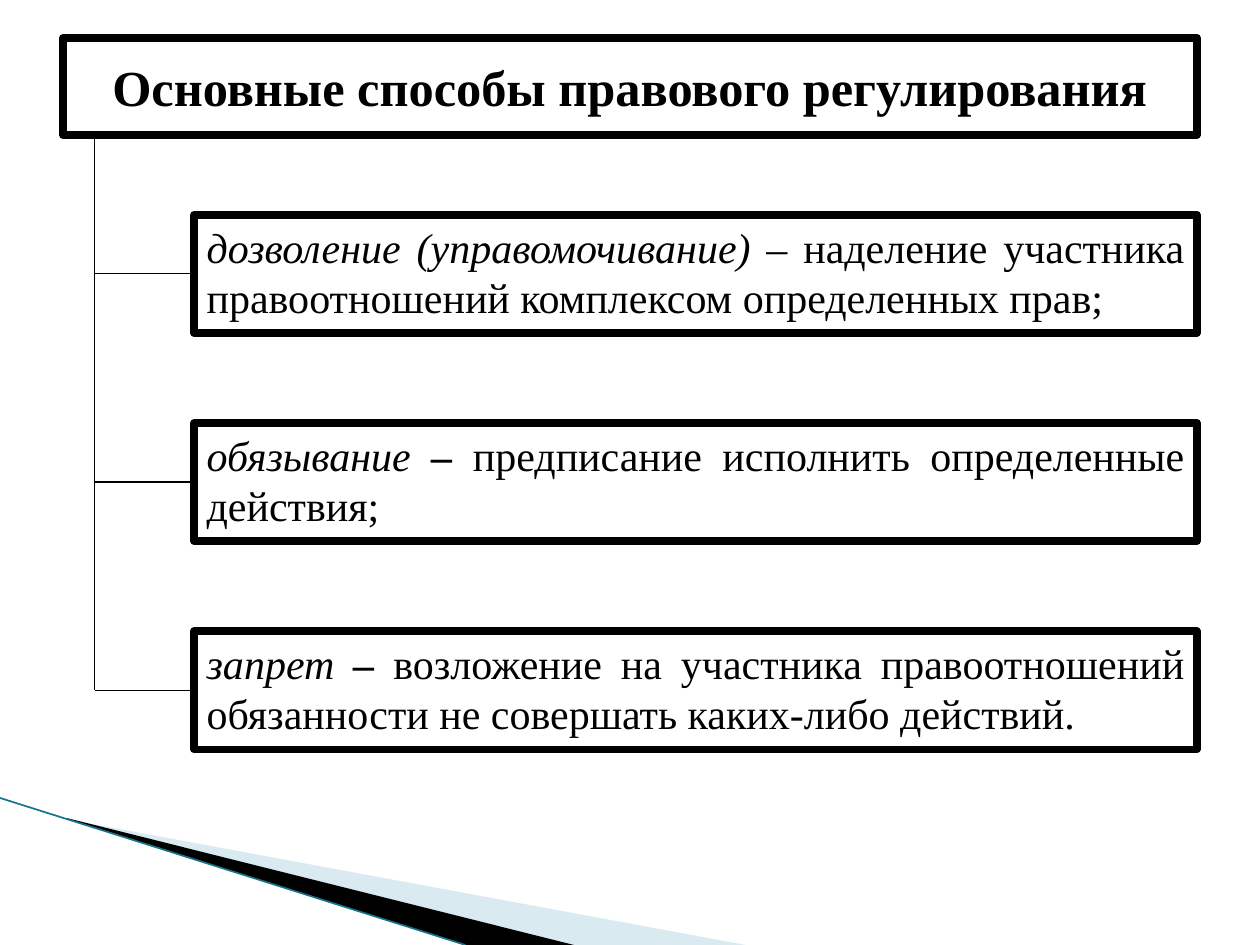
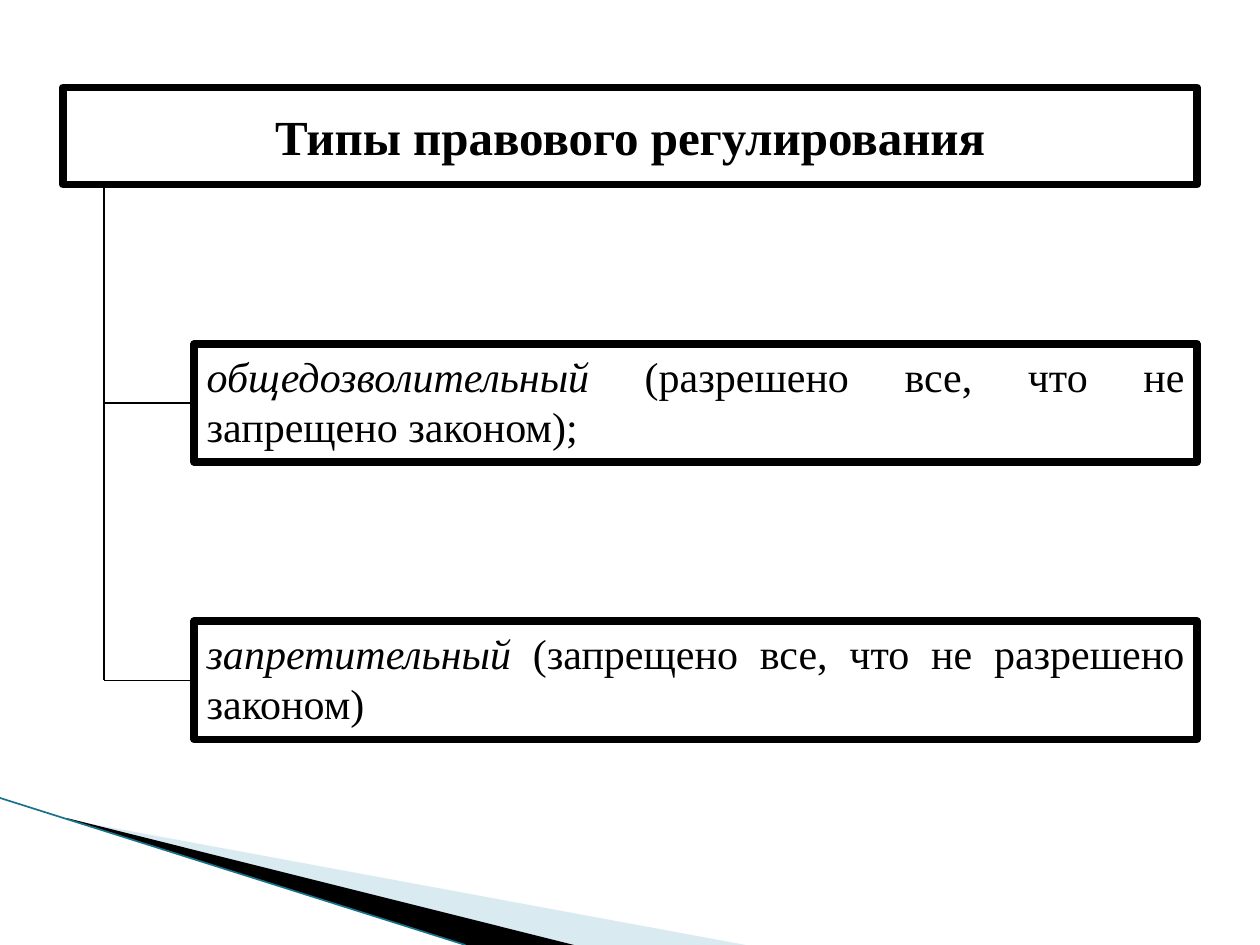
from lxml import etree
from pptx import Presentation
from pptx.dml.color import RGBColor
from pptx.enum import shapes as es, text as et
from pptx.oxml.ns import qn
from pptx.util import Pt

FONT = "Times New Roman"
HUE = {"ink": "000000", "paper": "FFFFFF", "pale": "A0CBDC", "teal": "17728A"}
WIDE, HIGH = 720, 540
LEFT, RIGHT = 36, 684        # edges of the title box
ITEM_X, ITEM_H = 111, 67.5   # boxes below the title
TITLE_H = 55.5


def color(name):
    return RGBColor.from_string(HUE[name])


def frame(shape, box):
    """Place a box and give it the white fill and heavy black border."""
    shape.left, shape.top, shape.width, shape.height = map(Pt, box)
    shape.fill.solid()
    shape.fill.fore_color.rgb = color("paper")
    shape.line.color.rgb = color("ink")
    shape.line.width = Pt(4.33)


def write(shape, runs, size, align, anchor):
    """Fill a box with runs of (text, style), style holding b and i."""
    body = shape.text_frame
    body.word_wrap = True
    body.auto_size = et.MSO_AUTO_SIZE.NONE
    body.vertical_anchor = anchor
    para = body.paragraphs[0]
    para.alignment = align
    for words, style in runs:
        run = para.add_run()
        run.text = words
        font = run.font
        font.name, font.size = FONT, Pt(size)
        font.color.rgb = color("ink")
        font.bold, font.italic = "b" in style, "i" in style


def line(slide, start, end, hue="ink", width=0.75):
    rule = slide.shapes.add_connector(
        es.MSO_CONNECTOR.STRAIGHT, *map(Pt, start + end))
    rule.line.color.rgb = color(hue)
    rule.line.width = Pt(width)
    etree.SubElement(rule._element.spPr, qn("a:effectLst"))


def wedge(slide, points, hue, alpha=None):
    pen = slide.shapes.build_freeform(*map(Pt, points[0]), scale=1.0)
    pen.add_line_segments([(Pt(x), Pt(y)) for x, y in points[1:]], close=True)
    shape = pen.convert_to_shape()
    shape.shadow.inherit = False
    shape.line.fill.background()
    shape.fill.solid()
    shape.fill.fore_color.rgb = color(hue)
    if alpha:
        tint = shape.fill._xPr.find(qn("a:solidFill"))[0]
        etree.SubElement(tint, qn("a:alpha"), val=str(alpha * 1000))


def corner(slide):
    """Draw the wedges at the bottom left that all slides share."""
    wedge(slide, [(39.6, 468.5), (426, HIGH), (328, HIGH), (39.6, 468)],
          "pale", 40)
    wedge(slide, [(38.2, 467.5), (328, HIGH), (266, HIGH), (38.9, 468)], "ink")
    line(slide, (0, 456), (266, HIGH), "teal", 0.95)


def heading(slide, words, size, top):
    title = slide.shapes.title
    frame(title, (LEFT, top, RIGHT - LEFT, TITLE_H))
    write(title, [(words, "b")], size, et.PP_ALIGN.CENTER,
          et.MSO_ANCHOR.MIDDLE)


def item(slide, runs, box):
    shape = slide.shapes.add_shape(es.MSO_SHAPE.RECTANGLE, *map(Pt, box))
    shape.shadow.inherit = False
    frame(shape, box)
    write(shape, runs, 24, et.PP_ALIGN.JUSTIFY, et.MSO_ANCHOR.TOP)


def tree(deck, words, size, top, first, step, spine, items):
    """Build a slide: a title box with a branch to each item."""
    slide = deck.slides.add_slide(deck.slide_layouts[5])
    corner(slide)
    heading(slide, words, size, top)
    for row, runs in enumerate(items):
        y = first + row * step
        item(slide, runs, (ITEM_X, y, RIGHT - ITEM_X, ITEM_H))
        mid = y + ITEM_H / 2
        line(slide, (spine, mid), (ITEM_X, mid))
    line(slide, (spine, top + TITLE_H), (spine, mid))


def main():
    deck = Presentation()
    deck.slide_width, deck.slide_height = Pt(WIDE), Pt(HIGH)
    tree(deck, "Основные способы правового регулирования", 28.8,
         top=21.6, first=122.75, step=119, spine=54, items=[
             [("дозволение (управомочивание) ", "i"),
              ("– наделение участника правоотношений комплексом "
               "определенных прав;", "")],
             [("обязывание", "i"), (" –", "bi"),
              (" предписание исполнить определенные действия;", "")],
             [("запрет", "i"), (" – ", "bi"),
              ("возложение на участника правоотношений обязанности "
               "не совершать каких-либо действий.", "")],
         ])
    tree(deck, "Типы правового регулирования", 28,
         top=50, first=196.5, step=158.5, spine=59.5, items=[
             [("общедозволительный", "i"),
              (" (разрешено все, что не запрещено законом);", "")],
             [("запретительный", "i"),
              (" (запрещено все, что не разрешено законом)", "")],
         ])
    deck.save("out.pptx")


if __name__ == "__main__":
    main()
